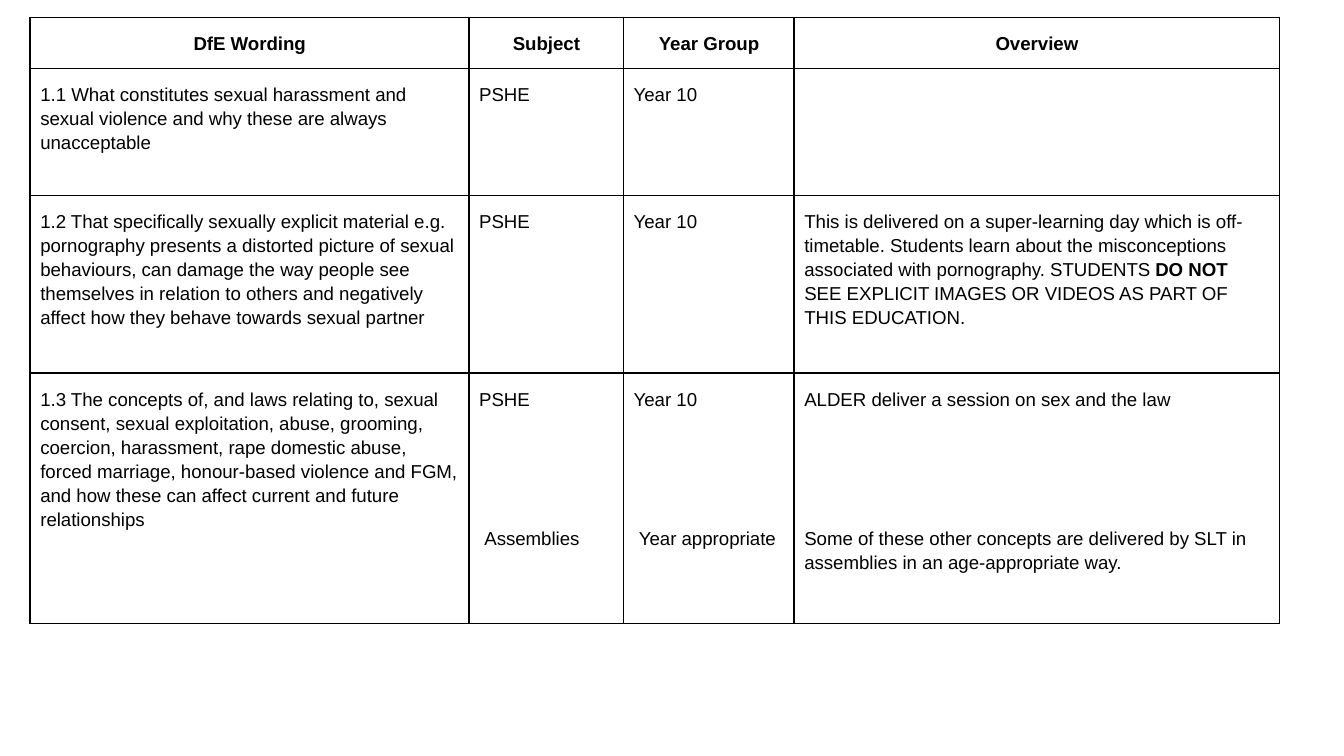
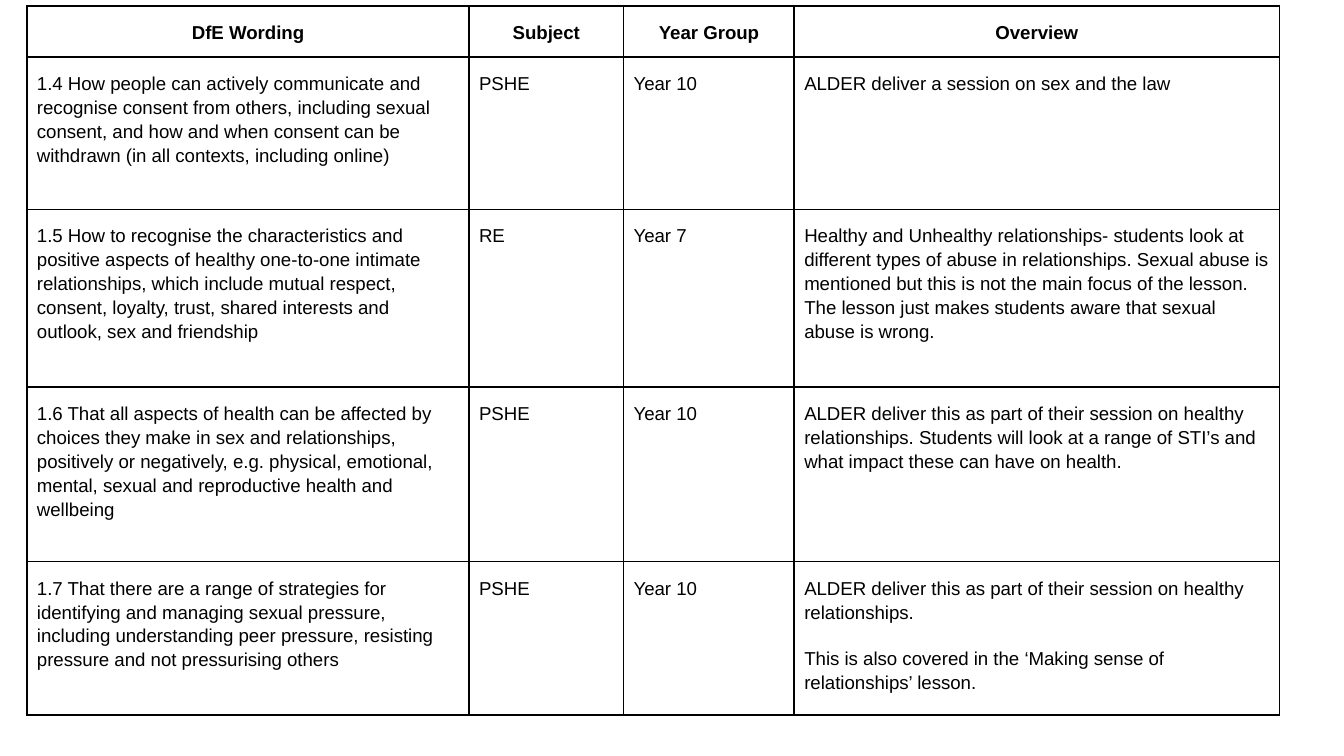
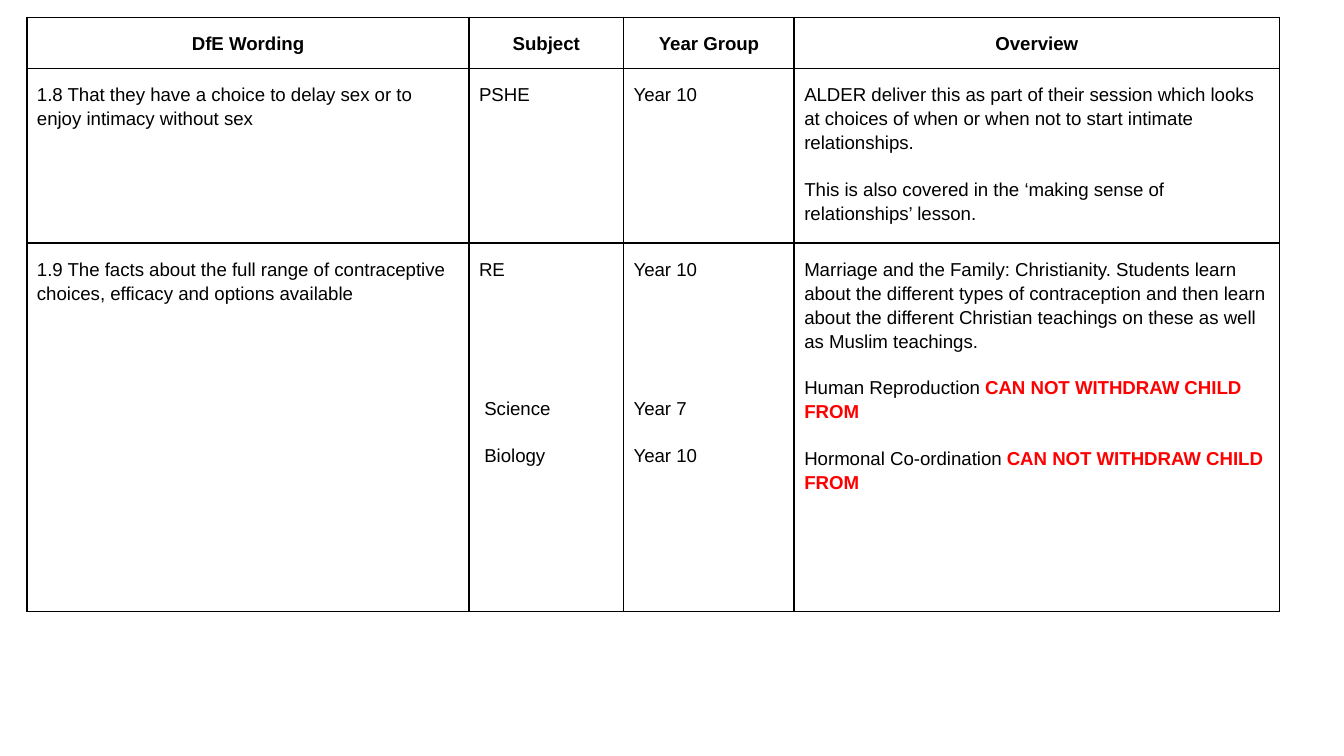
from lxml import etree
from pptx import Presentation
from pptx.dml.color import RGBColor
from pptx.enum.shapes import MSO_SHAPE
from pptx.enum.text import PP_ALIGN
from pptx.oxml.ns import qn
from pptx.util import Inches, Pt

RECT = MSO_SHAPE.RECTANGLE
LEFT, MID = PP_ALIGN.LEFT, PP_ALIGN.CENTER

# A 16:9 slide and the square grid laid over it
WIDTH = Inches(10)
HEIGHT = WIDTH * 9 // 16
COLS = 1000
ROWS = COLS * 9 / 16

INK, PAPER, ALERT = "000000", "FFFFFF", "FF0000"
PLAIN = {"name": "Arial", "size": Pt(10), "bold": False}
BOLD = {**PLAIN, "bold": True}
INSET = {"margin_left": Pt(5.4), "margin_right": Pt(5.4),
         "margin_top": Pt(7.2), "margin_bottom": Pt(7.2)}
GAP, DROP = 12, 61.7  # points before a next entry, and before a lower one
NUDGE = Pt(2.8)

HEADS = ["DfE Wording", "Subject", "Year Group", "Overview"]
HEAD_ROW = 38
SIDE_COLS = [115, 127, 361]


def cols(count):
    return round(WIDTH * count / COLS)


def rows(count):
    return round(HEIGHT * count / ROWS)


def hue(code):
    return RGBColor.from_string(code)


def apply(target, values):
    for name, value in values.items():
        setattr(target, name, value)


def entry(*runs, gap=GAP, indent=0):
    """One paragraph; a run is text or (text, colour) for bold."""
    return {"runs": runs, "gap": gap, "indent": indent}


def border(cell):
    props = cell._tc.get_or_add_tcPr()
    for side in ("a:lnL", "a:lnR", "a:lnT", "a:lnB"):
        line = etree.SubElement(props, qn(side), w=str(Pt(1)))
        fill = etree.SubElement(line, qn("a:solidFill"))
        etree.SubElement(fill, qn("a:srgbClr"), val=INK)


def write(cell, content, align=LEFT, style=PLAIN):
    apply(cell, INSET)
    border(cell)
    cell.fill.background()
    items = content if isinstance(content, list) else [content]
    for i, item in enumerate(items):
        item = entry(item) if isinstance(item, str) else item
        para = cell.text_frame.paragraphs[0] if i == 0 else cell.text_frame.add_paragraph()
        if item["indent"]:
            para._p.get_or_add_pPr().set("marL", str(item["indent"]))
        apply(para, {"alignment": align, "line_spacing": 1.15,
                     "space_before": Pt(item["gap"] if i else 0)})
        apply(para.font, style)
        for part in filter(None, item["runs"]):
            text, tint = (part, INK) if isinstance(part, str) else part
            run = para.add_run()
            run.text = text
            apply(run.font, style if isinstance(part, str) else BOLD)
            run.font.color.rgb = hue(tint)


def panel(slide, box):
    shape = slide.shapes.add_shape(RECT, *box)
    shape.shadow.inherit = False
    shape.fill.solid()
    shape.fill.fore_color.rgb = hue(PAPER)
    shape.line.color.rgb = hue(PAPER)
    shape.line.width = Pt(0.75)


def grid(slide, left, top, first, topics):
    """Table of topics; each topic is its row height and its cells."""
    spans = [first, *SIDE_COLS]
    tall = [HEAD_ROW, *(size for size, _ in topics)]
    table = slide.shapes.add_table(len(tall), len(spans), cols(left), rows(top),
                                   cols(sum(spans)), rows(sum(tall))).table
    apply(table, {"first_row": False, "horz_banding": False})
    for col, span in zip(table.columns, spans):
        col.width = cols(span)
    for row, size in zip(table.rows, tall):
        row.height = rows(size)
    for c, head in enumerate(HEADS):
        write(table.cell(0, c), head, MID, BOLD)
    for r, (_, cells) in enumerate(topics, 1):
        for c, content in enumerate(cells):
            write(table.cell(r, c), content)


LAW = "ALDER deliver a session on sex and the law"
BLOCK = ("CAN NOT WITHDRAW CHILD FROM", ALERT)

# Each page: left, top, width of first column, topics
PAGES = [
    (22.5, 13, 326.5, [
        (94.5, ["1.1 What constitutes sexual harassment and sexual violence and why these "
                "are always unacceptable", "PSHE", "Year 10", ""]),
        (132, ["1.2 That specifically sexually explicit material e.g. pornography presents "
               "a distorted picture of sexual behaviours, can damage the way people see "
               "themselves in relation to others and negatively affect how they behave "
               "towards sexual partner", "PSHE", "Year 10",
               entry("This is delivered on a super-learning day which is off-timetable. "
                     "Students learn about the misconceptions associated with pornography. "
                     "STUDENTS ", ("DO NOT", INK),
                     " SEE EXPLICIT IMAGES OR VIDEOS AS PART OF THIS EDUCATION.")]),
        (186.5, ["1.3 The concepts of, and laws relating to, sexual consent, sexual "
                 "exploitation, abuse, grooming, coercion, harassment, rape domestic abuse, "
                 "forced marriage, honour-based violence and FGM, and how these can affect "
                 "current and future relationships",
                 ["PSHE", entry("Assemblies", gap=DROP, indent=NUDGE)],
                 ["Year 10", entry("Year appropriate", gap=DROP, indent=NUDGE)],
                 [LAW, entry("Some of these other concepts are delivered by SLT in "
                             "assemblies in an age-appropriate way.", gap=DROP)]]),
    ]),
    (20, 4.5, 329, [
        (113.5, ["1.4 How people can actively communicate and recognise consent from "
                 "others, including sexual consent, and how and when consent can be "
                 "withdrawn (in all contexts, including online)", "PSHE", "Year 10", LAW]),
        (132, ["1.5 How to recognise the characteristics and positive aspects of healthy "
               "one-to-one intimate relationships, which include mutual respect, consent, "
               "loyalty, trust, shared interests and outlook, sex and friendship",
               "RE", "Year 7",
               "Healthy and Unhealthy relationships- students look at different types of "
               "abuse in relationships. Sexual abuse is mentioned but this is not the main "
               "focus of the lesson. The lesson just makes students aware that sexual abuse "
               "is wrong."]),
        (130, ["1.6 That all aspects of health can be affected by choices they make in sex "
               "and relationships, positively or negatively, e.g. physical, emotional, "
               "mental, sexual and reproductive health and wellbeing", "PSHE", "Year 10",
               "ALDER deliver this as part of their session on healthy relationships. "
               "Students will look at a range of STI’s and what impact these can have on "
               "health."]),
        (114, ["1.7 That there are a range of strategies for identifying and managing sexual "
               "pressure, including understanding peer pressure, resisting pressure and not "
               "pressurising others", "PSHE", "Year 10",
               ["ALDER deliver this as part of their session on healthy relationships.",
                "This is also covered in the ‘Making sense of relationships’ lesson."]]),
    ]),
    (20, 13, 329, [
        (130, ["1.8 That they have a choice to delay sex or to enjoy intimacy without sex",
               "PSHE", "Year 10",
               ["ALDER deliver this as part of their session which looks at choices of when "
                "or when not to start intimate relationships.",
                "This is also covered in the ‘making sense of relationships’ lesson."]]),
        (274, ["1.9 The facts about the full range of contraceptive choices, efficacy and "
               "options available",
               ["RE", entry("Science", gap=DROP, indent=NUDGE),
                entry("Biology", indent=NUDGE)],
               ["Year 10", entry("Year 7", gap=DROP), "Year 10"],
               ["Marriage and the Family: Christianity. Students learn about the different "
                "types of contraception and then learn about the different Christian "
                "teachings on these as well as Muslim teachings.",
                entry("Human Reproduction ", BLOCK),
                entry("Hormonal Co-ordination ", BLOCK)]]),
    ]),
]


def main():
    deck = Presentation()
    apply(deck, {"slide_width": WIDTH, "slide_height": HEIGHT})
    for page in PAGES:
        slide = deck.slides.add_slide(deck.slide_layouts[6])
        panel(slide, (0, 0, cols(983), rows(548)))
        grid(slide, *page)
    deck.save("out.pptx")


if __name__ == "__main__":
    main()
